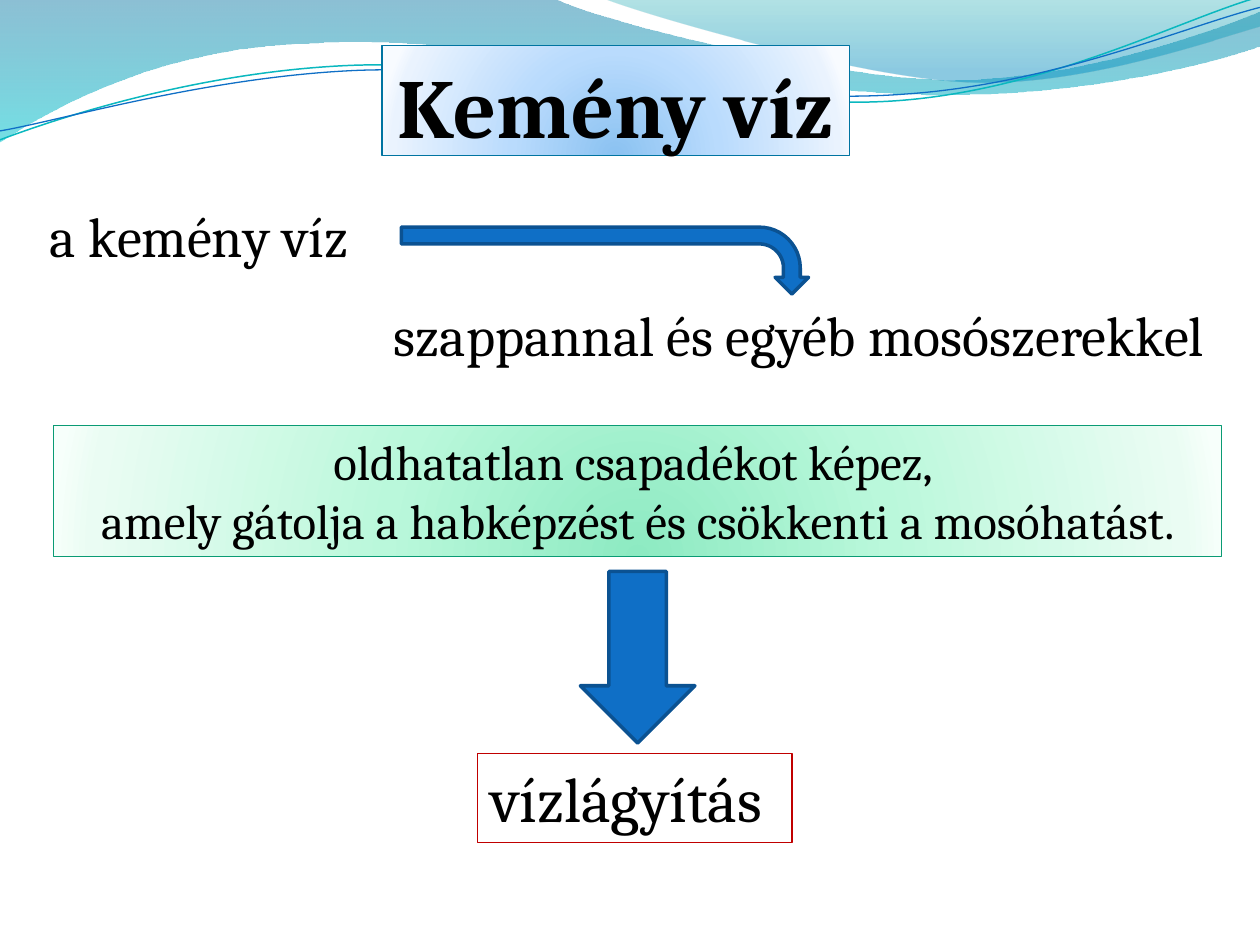
"""Build the "Kemény víz" (hard water) slide with its wave header and flow of arrows."""
from lxml.etree import SubElement
from pptx import Presentation
from pptx.dml.color import RGBColor
from pptx.enum.shapes import MSO_SHAPE
from pptx.enum.text import MSO_ANCHOR, MSO_AUTO_SIZE, PP_ALIGN
from pptx.oxml.ns import qn
from pptx.util import Cm, Pt

BLACK = RGBColor(0x00, 0x00, 0x00)
BLUE = RGBColor(0x0F, 0x6F, 0xC6)
DARK_BLUE = RGBColor(0x0B, 0x52, 0x92)
SEA_BLUE = RGBColor(0x00, 0x74, 0xA1)
AQUA = RGBColor(0x00, 0xC6, 0xCF)
TEAL = RGBColor(0x00, 0xA1, 0xA9)
SKY = RGBColor(0x00, 0x8B, 0xBF)
LINE_TEAL = RGBColor(0x0A, 0xB8, 0xBF)
GREEN = RGBColor(0x0A, 0x9B, 0x74)
RED = RGBColor(0xC0, 0x00, 0x00)
BLUE_GLOW = [(0, RGBColor(0x8B, 0xC2, 0xF1), 100), (43, RGBColor(0xB9, 0xDB, 0xFD), 100),
             (93, RGBColor(0xEA, 0xF3, 0xFE), 100), (100, RGBColor(0xF8, 0xFB, 0xFF), 100)]
GREEN_GLOW = [(0, RGBColor(0x8D, 0xEA, 0xC2), 100), (43, RGBColor(0xBA, 0xF8, 0xDB), 100),
              (93, RGBColor(0xEA, 0xFC, 0xF3), 100), (100, RGBColor(0xF7, 0xFF, 0xFB), 100)]
FONT = "Cambria"


def add_wave(shapes, start, segments, closed):
    """Draw lines (x, y) and Bézier curves (x1, y1, x2, y2, x, y), all in cm."""
    points = [(Cm(seg[i]), Cm(seg[i + 1])) for seg in segments for i in range(0, len(seg), 2)]
    builder = shapes.build_freeform(Cm(start[0]), Cm(start[1]))
    builder.add_line_segments(points, close=closed)
    sp = builder.convert_to_shape()
    sp.shadow.inherit = False
    steps = iter(list(sp.element.iter(qn("a:lnTo"))))
    for seg in segments:
        step = next(steps)
        if len(seg) == 6:
            step.tag = qn("a:cubicBezTo")
            for _ in range(2):
                extra = next(steps)
                step.append(extra[0])
                extra.getparent().remove(extra)
    return sp


def set_gradient(sp, stops, radial):
    """Fill a shape with (position, colour, opacity) stops, in per cent."""
    sp.fill.background()
    grad = sp.element.spPr.find(qn("a:noFill"))
    grad.tag = qn("a:gradFill")
    gs_lst = SubElement(grad, qn("a:gsLst"))
    for pos, color, opacity in stops:
        gs = SubElement(gs_lst, qn("a:gs"), pos=str(pos * 1000))
        clr = SubElement(gs, qn("a:srgbClr"), val=str(color))
        if opacity < 100:
            SubElement(clr, qn("a:alpha"), val=str(opacity * 1000))
    if radial:
        path_el = SubElement(grad, qn("a:path"))
        path_el.set("path", "circle")
        SubElement(path_el, qn("a:fillToRect"), l="50000", t="130000", r="50000", b="-30000")
    else:
        SubElement(grad, qn("a:lin"), ang="5400000", scaled="0")


prs = Presentation()
prs.slide_width, prs.slide_height = Cm(25.4), Cm(19.05)
s = prs.slides.add_slide(prs.slide_layouts[5])

bands = [
    ((0, 0), [(11.18, -0.03), (12.09, 0.43, 16.87, 1.6, 19.25, 1.6),
              (21.67, 1.6, 24.33, 0.66, 25.4, 0.23), (25.43, 0.91),
              (24.97, 1.12, 22.1, 1.93, 18.95, 1.91), (15.8, 1.91, 9.7, 0.71, 6.53, 0.86),
              (3.28, 0.91, 1.17, 2.11, -0.03, 2.87)],
     [(0, SEA_BLUE, 45), (100, AQUA, 55)]),
    ((12.17, -0.03), [(12.93, 0.28, 17.32, 1.57, 19.53, 1.65),
                      (21.74, 1.75, 24.41, 0.81, 25.4, 0.53), (25.4, 0)],
     [(0, TEAL, 30), (80, SKY, 45)]),
]
for start, segments, stops in bands:
    sp = add_wave(s.shapes, start, segments, True)
    set_gradient(sp, stops, False)
    sp.line.fill.background()

strands = [
    ((0, 2.82), [(1.22, 2.36, 4.01, 1.45, 7.04, 1.32), (10.03, 1.19, 15.06, 2.26, 18.11, 2.03),
                 (21.16, 1.8, 23.83, 0.38, 25.35, -0.05)], LINE_TEAL, 0.85),
    ((0, 2.64), [(1.19, 2.44, 4.17, 1.55, 7.19, 1.42), (10.24, 1.3, 15.16, 2.13, 18.21, 1.9),
                 (21.23, 1.7, 23.9, 0.53, 25.4, 0.15)], BLUE, 0.75),
]
for start, segments, color, width in strands:
    sp = add_wave(s.shapes, start, segments, False)
    sp.fill.background()
    sp.line.color.rgb = color
    sp.line.width = Pt(width)

title = s.shapes.title
title.element.getparent().append(title.element)
title.left, title.top, title.width, title.height = Cm(7.7), Cm(0.92), Cm(9.42), Cm(2.21)
set_gradient(title, BLUE_GLOW, True)
title.line.color.rgb = SEA_BLUE
title.line.width = Pt(0.75)
tf = title.text_frame
tf.text = "Kemény víz"
tf.auto_size = MSO_AUTO_SIZE.NONE
tf.vertical_anchor = MSO_ANCHOR.BOTTOM
tf.margin_left = tf.margin_right = tf.margin_bottom = 0
tf.margin_top = Cm(0.13)
p = tf.paragraphs[0]
p.alignment = PP_ALIGN.CENTER
p.font.name, p.font.size, p.font.bold = FONT, Pt(48), True
p.font.color.rgb = BLACK

boxes = [
    (0.51, 3.94, 7.16, 1.63, [" a kemény víz"], 32, PP_ALIGN.LEFT, None, None),
    (7.69, 5.93, 18.24, 1.63, ["szappannal és egyéb mosószerekkel"], 32, PP_ALIGN.LEFT, None, None),
    (1.08, 8.58, 23.55, 2.64,
     ["oldhatatlan csapadékot képez, ", "amely gátolja a habképzést és csökkenti a mosóhatást."],
     28, PP_ALIGN.CENTER, GREEN, GREEN_GLOW),
    (9.63, 15.19, 6.34, 1.8, ["vízlágyítás"], 36, PP_ALIGN.LEFT, RED, None),
]
for left, top, width, height, lines, size, align, border, glow in boxes:
    frame = Cm(left), Cm(top), Cm(width), Cm(height)
    if border:
        sp = s.shapes.add_shape(MSO_SHAPE.RECTANGLE, *frame)
        sp.shadow.inherit = False
        sp.fill.background()
        sp.line.color.rgb = border
        sp.line.width = Pt(0.75)
    else:
        sp = s.shapes.add_textbox(*frame)
    if glow:
        set_gradient(sp, glow, True)
    tf = sp.text_frame
    tf.word_wrap = True
    tf.vertical_anchor = MSO_ANCHOR.TOP
    tf.text = "\n".join(lines)
    for p in tf.paragraphs:
        p.alignment = align
        p.font.name, p.font.size = FONT, Pt(size)
        p.font.color.rgb = BLACK

arrows = [
    (MSO_SHAPE.DOWN_ARROW, 11.7, 11.52, 2.31, 3.46, 0, [0.5, 0.5]),
    (MSO_SHAPE.BENT_ARROW, 11.52, 1.15, 1.35, 8.21, 90, [0.25, 0.25, 0.25, 0.61]),
]
for kind, left, top, width, height, rotation, adjustments in arrows:
    sp = s.shapes.add_shape(kind, Cm(left), Cm(top), Cm(width), Cm(height))
    sp.rotation = rotation
    for i, value in enumerate(adjustments):
        sp.adjustments[i] = value
    sp.shadow.inherit = False
    sp.fill.solid()
    sp.fill.fore_color.rgb = BLUE
    sp.line.color.rgb = DARK_BLUE
    sp.line.width = Pt(2)

prs.save("out.pptx")
